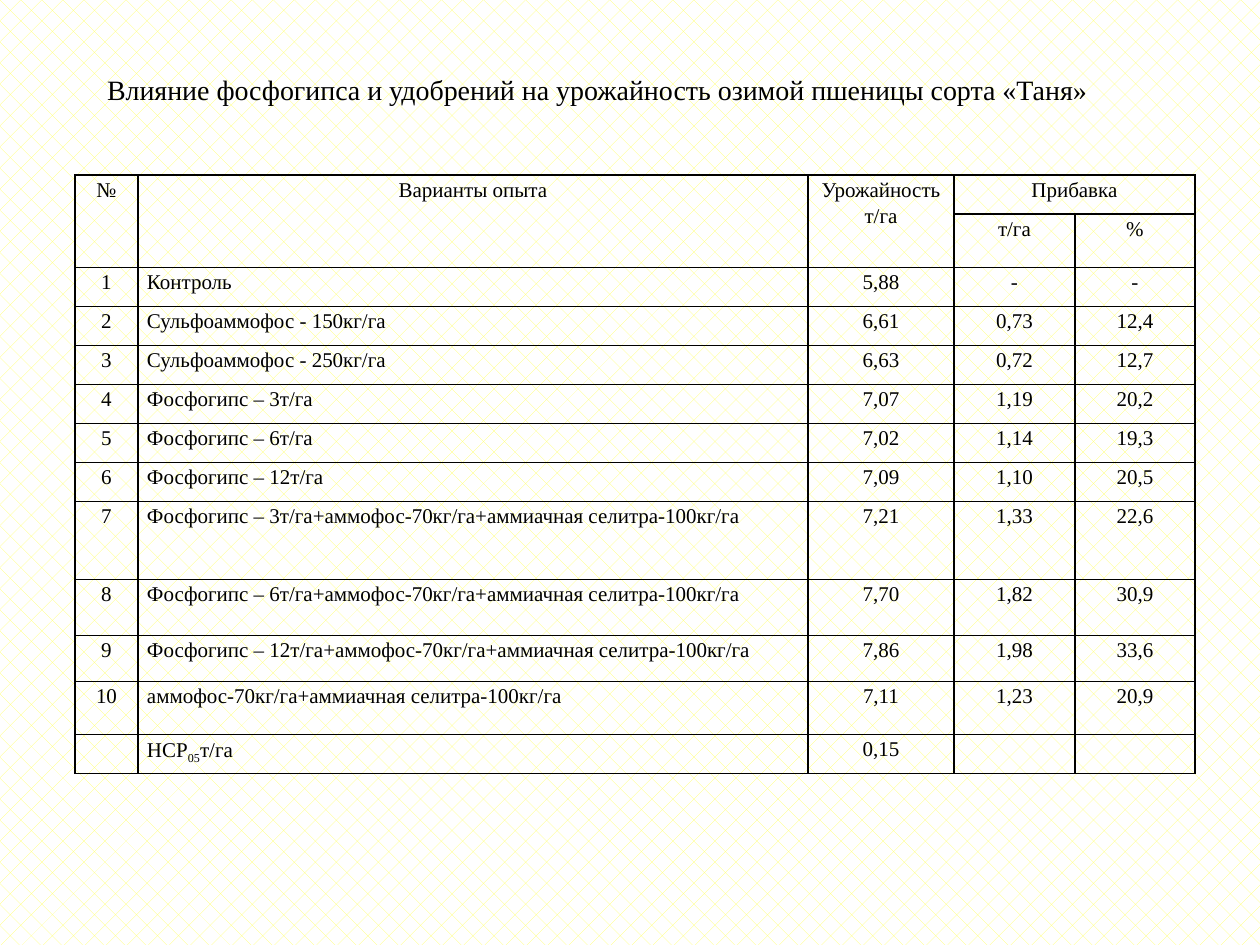
from dataclasses import dataclass

from lxml.etree import SubElement
from pptx import Presentation
from pptx.dml.color import RGBColor as Rgb
from pptx.enum.dml import MSO_PATTERN as Pattern
from pptx.enum.text import MSO_ANCHOR as Anchor, MSO_AUTO_SIZE as Auto, PP_ALIGN as Align
from pptx.oxml.ns import qn
from pptx.util import Emu, Pt

SCALE = 914400 / 126


def px(n):
    return Emu(round(n * SCALE))


def assign(obj, values):
    for name, value in values.items():
        setattr(obj, name, value)


@dataclass(frozen=True)
class Theme:
    ink: str = "000000"
    paper: str = "FFFFFF"
    brick: str = "FFFF66"
    face: str = "Times New Roman"
    head: int = 16
    body: int = 12
    rule: int = 1
    lead: float = 1.15


class Deck:
    def __init__(self, theme):
        self.theme = theme
        self.file = Presentation()
        assign(self.file, {"slide_width": px(1260), "slide_height": px(945)})
        self.slide = self.file.slides.add_slide(self.file.slide_layouts[5])

    def back(self):
        fill = self.slide.background.fill
        fill.patterned()
        fill.pattern = Pattern.DIAGONAL_BRICK
        fill.fore_color.rgb = Rgb.from_string(self.theme.brick)
        fill.back_color.rgb = Rgb.from_string(self.theme.paper)

    def label(self, frame, text, size, align):
        """Fill a frame with one paragraph; text between bars is subscript."""
        para = frame.paragraphs[0]
        assign(para, {"alignment": align, "line_spacing": self.theme.lead})
        for i, part in enumerate(text.split("|")):
            run = para.add_run()
            run.text = part
            assign(run.font, {"name": self.theme.face, "size": Pt(size), "bold": False})
            run.font.color.rgb = Rgb.from_string(self.theme.ink)
            if i % 2:
                run.font._element.set("baseline", "-25000")

    def title(self, text, left, top, width, height):
        shape = self.slide.shapes.title
        assign(shape, {"left": px(left), "top": px(top),
                       "width": px(width), "height": px(height)})
        frame = shape.text_frame
        assign(frame, {"word_wrap": True, "auto_size": Auto.NONE,
                       "vertical_anchor": Anchor.MIDDLE, "margin_left": px(13),
                       "margin_right": px(0), "margin_top": px(6), "margin_bottom": px(36)})
        self.label(frame, text, self.theme.head, Align.JUSTIFY)

    def border(self, cell):
        props = cell._tc.get_or_add_tcPr()
        for i, side in enumerate(("lnL", "lnR", "lnT", "lnB")):
            line = SubElement(props, qn("a:" + side), w=str(Pt(self.theme.rule)))
            fill = SubElement(line, qn("a:solidFill"))
            SubElement(fill, qn("a:srgbClr"), val=self.theme.ink)
            props.insert(i, line)

    def table(self, left, top, cols, rows, data, spans):
        grid = self.slide.shapes.add_table(
            len(rows), len(cols), px(left), px(top), px(sum(cols)), px(sum(rows))).table
        assign(grid, {"first_row": False, "horz_banding": False})
        for col, width in zip(grid.columns, cols):
            col.width = px(width)
        for row, height in zip(grid.rows, rows):
            row.height = px(height)
        for first, last in spans:
            grid.cell(*first).merge(grid.cell(*last))
        for r, line in enumerate(data):
            for c, text in enumerate(line):
                cell = grid.cell(r, c)
                assign(cell, {"margin_left": px(9), "margin_right": px(9),
                              "margin_top": 0, "margin_bottom": 0})
                cell.fill.background()
                self.border(cell)
                if text:
                    align = Align.LEFT if c == 1 and r > 1 else Align.CENTER
                    self.label(cell.text_frame, text, self.theme.body, align)


HEAD = [
    ("№", "Варианты опыта", "Урожайность т/га", "Прибавка", ""),
    ("", "", "", "т/га", "%"),
]
MIX = "аммофос-70кг/га+аммиачная селитра-100кг/га"
TRIALS = [
    ("Контроль", "5,88", "-", "-"),
    ("Сульфоаммофос - 150кг/га", "6,61", "0,73", "12,4"),
    ("Сульфоаммофос - 250кг/га", "6,63", "0,72", "12,7"),
    ("Фосфогипс – 3т/га", "7,07", "1,19", "20,2"),
    ("Фосфогипс – 6т/га", "7,02", "1,14", "19,3"),
    ("Фосфогипс – 12т/га", "7,09", "1,10", "20,5"),
    ("Фосфогипс – 3т/га+" + MIX, "7,21", "1,33", "22,6"),
    ("Фосфогипс – 6т/га+" + MIX, "7,70", "1,82", "30,9"),
    ("Фосфогипс – 12т/га+" + MIX, "7,86", "1,98", "33,6"),
    (MIX, "7,11", "1,23", "20,9"),
]
ERROR = ("", "НСР|05|т/га", "0,15", "", "")


def main():
    deck = Deck(Theme())
    deck.back()
    deck.title("Влияние фосфогипса и удобрений на урожайность озимой пшеницы сорта «Таня»",
               94, 38, 1012, 127)
    body = [(str(n), *trial) for n, trial in enumerate(TRIALS, 1)]
    spans = [((0, c), (1, c)) for c in range(3)] + [((0, 3), (0, 4))]
    deck.table(75, 175, [63, 670, 146, 121, 120],
               [39, 53] + [39] * 6 + [78, 56, 46, 53, 39],
               HEAD + body + [ERROR], spans)
    deck.file.save("out.pptx")


if __name__ == "__main__":
    main()
